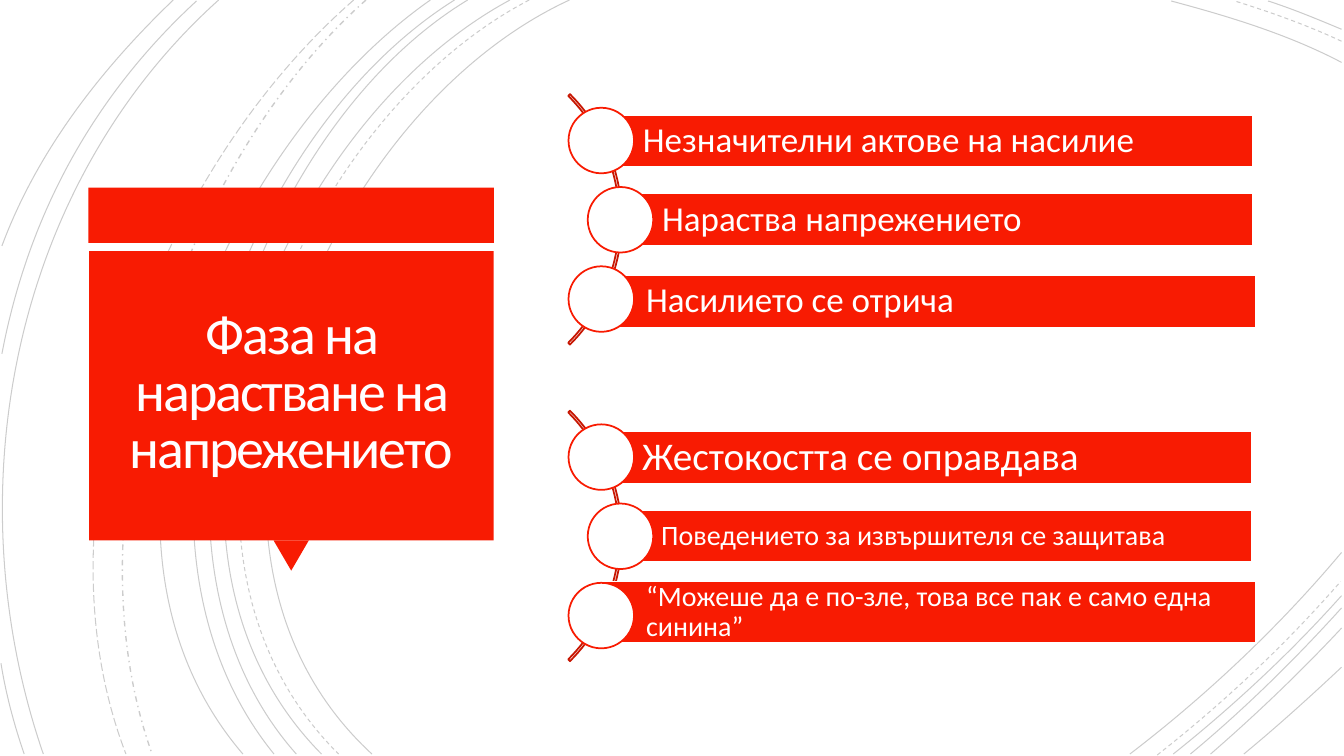
from lxml import etree
from pptx import Presentation
from pptx.dml.color import RGBColor
from pptx.enum.dml import MSO_LINE_DASH_STYLE as Dash
from pptx.enum.shapes import MSO_SHAPE as Shape
from pptx.enum.text import MSO_ANCHOR as Anchor, PP_ALIGN as Align
from pptx.oxml.ns import qn
from pptx.util import Pt

RED, DARK_RED, WHITE = "F81B02", "C71602", "FFFFFF"
BOTTOM, RIGHT = 538.6, 958.3

deck = Presentation()
deck.slide_width, deck.slide_height = Pt(960), Pt(540)
page = deck.slides.add_slide(deck.slide_layouts[6])


def add_box(kind, left, top, width, height, fill=None, line=None):
    box = page.shapes.add_shape(kind, Pt(left), Pt(top), Pt(width), Pt(height))
    box.shadow.inherit = False
    if fill:
        box.fill.solid()
        box.fill.fore_color.rgb = RGBColor.from_string(fill)
    else:
        box.fill.background()
    if line:
        box.line.color.rgb = RGBColor.from_string(line)
        box.line.width = Pt(1.25)
    else:
        box.line.fill.background()
    return box


def write(box, text, size, color, spacing, align, insets):
    """Fill the box with one paragraph; insets run left, top, right, bottom."""
    frame = box.text_frame
    frame.word_wrap = True
    frame.vertical_anchor = Anchor.MIDDLE
    (frame.margin_left, frame.margin_top,
     frame.margin_right, frame.margin_bottom) = [Pt(inset) for inset in insets]
    para = frame.paragraphs[0]
    para.alignment, para.line_spacing = align, spacing
    span = para.add_run()
    span.text = text
    span.font.name, span.font.size = "Calibri", Pt(size)
    span.font.color.rgb = RGBColor.from_string(color)
    return span


# Background arcs: start, two control points, end, then the dash
arcs = [
    ((406.8, 0), (226.8, 82.8), (103, 388.8), (265.7, BOTTOM), Dash.SOLID),
    ((RIGHT, 44.6), (920.2, 24.5), (877, 11.5), (836.6, 0.7), Dash.SOLID),
    ((807.1, BOTTOM), (861.8, 496.8), (913.7, 447.8), (RIGHT, 394.6), Dash.SOLID),
    ((378, 0), (205.2, 90), (88.6, 386.6), (241.9, BOTTOM), Dash.DASH),
    ((RIGHT, 29.5), (933.8, 18), (907.2, 8.6), (882, 0.7), Dash.DASH),
    ((826.6, 539.3), (873.4, 502.6), (918, 460.8), (957.6, 415.4), Dash.DASH),
    ((364.3, 0), (194.4, 91.4), (79.2, 386.6), (229.7, BOTTOM), Dash.SOLID),
    ((RIGHT, 20.9), (941, 13.7), (923.8, 6.5), (905.8, 0.7), Dash.SOLID),
    ((838.1, BOTTOM), (880.6, 504.7), (921.6, 466.6), (RIGHT, 425.5), Dash.SOLID),
    ((334.1, 0), (175.7, 95.8), (79.2, 389.5), (211.7, BOTTOM), Dash.SOLID),
    ((850.3, BOTTOM), (888.5, 506.9), (924.5, 471.6), (RIGHT, 434.2), Dash.SOLID),
    ((324.7, 0), (166.3, 99.4), (69.8, 383.8), (195.8, BOTTOM), Dash.SOLID),
    ((864.7, BOTTOM), (897.1, 510.5), (928.8, 480.2), (RIGHT, 448.6), Dash.SOLID),
    ((307.4, 0), (156.2, 105.8), (38.2, 380.9), (173.5, BOTTOM), Dash.SOLID),
    ((888.5, BOTTOM), (912.2, 519.1), (935.3, 498.2), (RIGHT, 476.6), Dash.SOLID),
    ((261.4, 0), (126.7, 119.5), (46.8, 366.5), (108.7, BOTTOM), Dash.DASH_DOT),
    ((252.7, 0), (113, 121.7), (20.9, 359.3), (90, BOTTOM), Dash.LONG_DASH),
    ((156.2, 0), (7.9, 133.2), (-33.1, 352.8), (31, BOTTOM), Dash.SOLID),
    ((140.4, 0.7), (66.2, 69.1), (20.2, 154.1), (1.4, 252.7), Dash.SOLID),
    ((0.7, 473.8), (4.3, 496.1), (10.1, 517.7), (17.3, BOTTOM), Dash.SOLID),
    ((123.8, 0), (72, 49.7), (26.6, 108), (1.4, 175.7), Dash.SOLID),
]
for *points, dash in arcs:
    start, *others = [(Pt(x), Pt(y)) for x, y in points]
    builder = page.shapes.build_freeform(*start)
    builder.add_line_segments(others, close=False)
    arc = builder.convert_to_shape()
    arc.shadow.inherit = False
    arc.fill.background()
    arc.line.color.rgb = RGBColor.from_string("000000")
    arc.line.width = Pt(1 if dash == Dash.DASH_DOT else 0.75)
    arc.line.dash_style = dash
    # Turn the three straight segments into one Bézier curve
    outline = next(arc._element.iter(qn("a:path")))
    segments = outline.findall(qn("a:lnTo"))
    curve = etree.SubElement(outline, qn("a:cubicBezTo"))
    for segment in segments:
        curve.append(segment[0])
        outline.remove(segment)
    ink = next(arc.line._ln.iter(qn("a:srgbClr")))
    etree.SubElement(ink, qn("a:alpha")).set("val", "20000")

# Title panel
add_box(Shape.RECTANGLE, 63.2, 134, 289.5, 39.6, RED)
pointer = add_box(Shape.ISOSCELES_TRIANGLE, 195.4, 386, 25.2, 21.6, RED)
pointer.rotation = 180
panel = add_box(Shape.RECTANGLE, 63.6, 179.4, 289, 206.6, RED)
title = write(panel, "Фаза на нарастване на напрежението", 40, "FFFEFF",
              0.85, Align.CENTER, (13.7, 12.2, 13.7, 14.4))
title.font._element.set("spc", "-150")

# Two curved lists: top of the first circle, then bar left, top, width, height
lists = [
    (77, [
        (429.8, 82.1, 465.1, 37.4, "Незначителни актове на насилие", 25),
        (443.5, 138.2, 451.4, 37.4, "Нараства напрежението", 25),
        (432, 196.6, 465.1, 37.4, "Насилието се отрича", 25),
    ]),
    (303.1, [
        (429.1, 308.2, 465.1, 37.4, "Жестокостта се оправдава", 28),
        (442.8, 364.3, 451.4, 37.4, "Поведението за извършителя се защитава", 20),
        (432, 415.4, 465.1, 43.9,
         "“Можеше да е по-зле, това все пак е само една синина”", 20),
    ]),
]
for list_top, bars in lists:
    spine = add_box(Shape.BLOCK_ARC, 191.2, list_top - 46.8, 253, 253, line=DARK_RED)
    for index, value in enumerate((189, 27, 0.007)):
        spine.adjustments[index] = value
    for row, (left, top, width, height, text, size) in enumerate(bars):
        bar = add_box(Shape.RECTANGLE, left, top, width, height, RED, WHITE)
        write(bar, text, size, WHITE, 0.9, Align.LEFT, (29.5, 4.5, 4.5, 4.5))
        circle_left = 419.8 if row == 1 else 406.1
        add_box(Shape.OVAL, circle_left, list_top + 56.6 * row, 46.8, 46.8, WHITE, RED)

deck.save("out.pptx")
